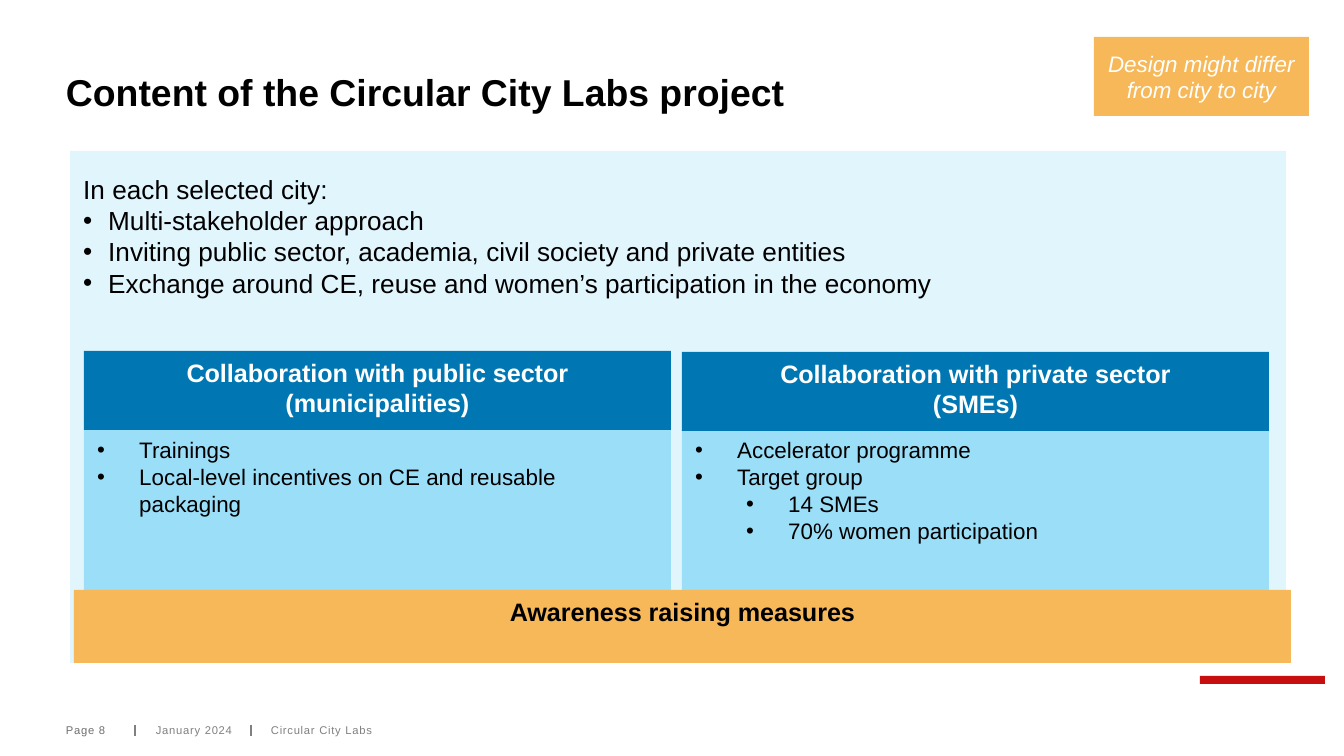
from dataclasses import dataclass

from lxml.etree import SubElement
from pptx import Presentation
from pptx.dml.color import RGBColor
from pptx.enum.shapes import MSO_CONNECTOR, MSO_SHAPE
from pptx.enum.text import MSO_ANCHOR as ANCHOR, PP_ALIGN as ALIGN
from pptx.oxml.ns import qn
from pptx.util import Emu, Pt

# Content
TITLE = "Content of the Circular City Labs project"
NOTE = "Design might differ from city to city"
INTRO = "In each selected city:"
APPROACH = [
    "Multi-stakeholder approach",
    "Inviting public sector, academia, civil society and private entities",
    "Exchange around CE, reuse and women’s participation in the economy",
]
SECTORS = [  # heading lines, then (level, measure)
    (["Collaboration with public sector", "(municipalities)"],
     [(0, "Trainings"),
      (0, "Local-level incentives on CE and reusable packaging")]),
    (["Collaboration with private sector", "(SMEs)"],
     [(0, "Accelerator programme"), (0, "Target group"),
      (1, "14 SMEs"), (1, "70% women participation")]),
]
AWARENESS = "Awareness raising measures"


@dataclass(frozen=True)
class Theme:
    font: str = "Arial"
    black: str = "000000"
    white: str = "FFFFFF"
    sky: str = "6DCFF6"
    blue: str = "0077B2"
    amber: str = "F6B859"
    red: str = "C80F0F"
    grey: str = "808080"
    dark_grey: str = "6F6F6F"
    title: float = 20
    intro: float = 14
    heading: float = 13.5
    body: float = 12
    footer: float = 6


THEME = Theme()
FOOTER = [  # text, left, width, colour
    ("Page 8", 66, 66, THEME.dark_grey),
    ("January 2024", 156, 78, THEME.grey),
    ("Circular City Labs", 271, 850, THEME.grey),
]
FOOTER_TOP, FOOTER_HEIGHT = 724, 13
FOOTER_RULES = [135, 251]

COLUMN_LEFT, COLUMN_WIDTH, COLUMN_GAP = 84, 587, 11
HEADING_TOP, HEADING_HEIGHT = 351, 79
BODY_TOP, AWARENESS_TOP = 430, 590


def px(length):
    return Emu(round(length * 914400 / 134.4))


prs = Presentation()
prs.slide_width, prs.slide_height = px(1344), px(756)
slide = prs.slides.add_slide(prs.slide_layouts[6])


def rectangle(box, colour, opacity=100):
    shape = slide.shapes.add_shape(MSO_SHAPE.RECTANGLE, *map(px, box))
    shape.shadow.inherit = False
    shape.fill.solid()
    shape.fill.fore_color.rgb = RGBColor.from_string(colour)
    if opacity < 100:
        tint = shape._element.spPr.find(".//" + qn("a:srgbClr"))
        SubElement(tint, qn("a:alpha"), val=str(opacity * 1000))
    shape.line.fill.background()
    return shape


def label(box):
    """Add an empty text box without insets."""
    frame = slide.shapes.add_textbox(*map(px, box)).text_frame
    frame.margin_left = frame.margin_top = 0
    frame.margin_right = frame.margin_bottom = 0
    return frame


def write(frame, items, size, colour=THEME.black, align=ALIGN.LEFT,
          anchor=ANCHOR.TOP, bold=False, italic=False):
    """Fill a frame with (text, bullet indent, hanging) items, in px."""
    frame.word_wrap = True
    frame.vertical_anchor = anchor
    for number, (text, indent, hanging) in enumerate(items):
        paragraph = frame.add_paragraph() if number else frame.paragraphs[0]
        paragraph.text = text
        paragraph.alignment = align
        if hanging:
            properties = paragraph._p.get_or_add_pPr()
            properties.set("marL", str(px(indent)))
            properties.set("indent", str(-px(hanging)))
            SubElement(properties, qn("a:buFont"), typeface=THEME.font)
            SubElement(properties, qn("a:buChar"), char="•")
        font = paragraph.font
        font.name, font.size = THEME.font, Pt(size)
        font.bold, font.italic = bold, italic
        font.color.rgb = RGBColor.from_string(colour)


def plain(*lines):
    return [(line, 0, 0) for line in lines]


# Footer and accent
rectangle((1200, 676, 125, 8), THEME.red)
for x in FOOTER_RULES:
    rule = slide.shapes.add_connector(
        MSO_CONNECTOR.STRAIGHT, px(x), px(FOOTER_TOP + 1), px(x), px(FOOTER_TOP + 12))
    rule.line.color.rgb = RGBColor.from_string(THEME.grey)
    rule.line.width = Pt(0.75)
    SubElement(rule._element.spPr, qn("a:effectLst"))
for text, left, width, colour in FOOTER:
    frame = label((left, FOOTER_TOP, width, FOOTER_HEIGHT))
    write(frame, plain(text), THEME.footer, colour, anchor=ANCHOR.MIDDLE)
    frame.paragraphs[0].runs[0]._r.get_or_add_rPr().set("spc", "40")

# Panel with the approach
panel = rectangle((70, 151, 1216, 512), THEME.sky, 20).text_frame
panel.margin_top = px(22)
write(panel, plain(INTRO) + [(text, 25, 25) for text in APPROACH], THEME.intro)

# One column per sector; the second sits one px lower
for column, (heading, measures) in enumerate(SECTORS):
    left = COLUMN_LEFT + column * (COLUMN_WIDTH + COLUMN_GAP)
    body = rectangle((left, BODY_TOP, COLUMN_WIDTH, AWARENESS_TOP - BODY_TOP),
                     THEME.sky, 60)
    write(body.text_frame,
          [(text, 42 + 51 * level, 42) for level, text in measures], THEME.body)
    head = rectangle((left, HEADING_TOP + column, COLUMN_WIDTH, HEADING_HEIGHT),
                     THEME.blue)
    write(head.text_frame, plain(*heading), THEME.heading, THEME.white,
          ALIGN.CENTER, bold=True)

awareness = rectangle((74, AWARENESS_TOP, 1217, 73), THEME.amber)
write(awareness.text_frame, plain(AWARENESS), THEME.heading,
      align=ALIGN.CENTER, bold=True)

# Title and note
title = label((66, 35, 1259, 79))
write(title, plain(TITLE), THEME.title, anchor=ANCHOR.BOTTOM, bold=True)
title.paragraphs[0].line_spacing = 1.5
note = rectangle((1094, 37, 215, 79), THEME.amber)
write(note.text_frame, plain(NOTE), THEME.body, THEME.white, ALIGN.CENTER,
      ANCHOR.MIDDLE, italic=True)

prs.save("out.pptx")
